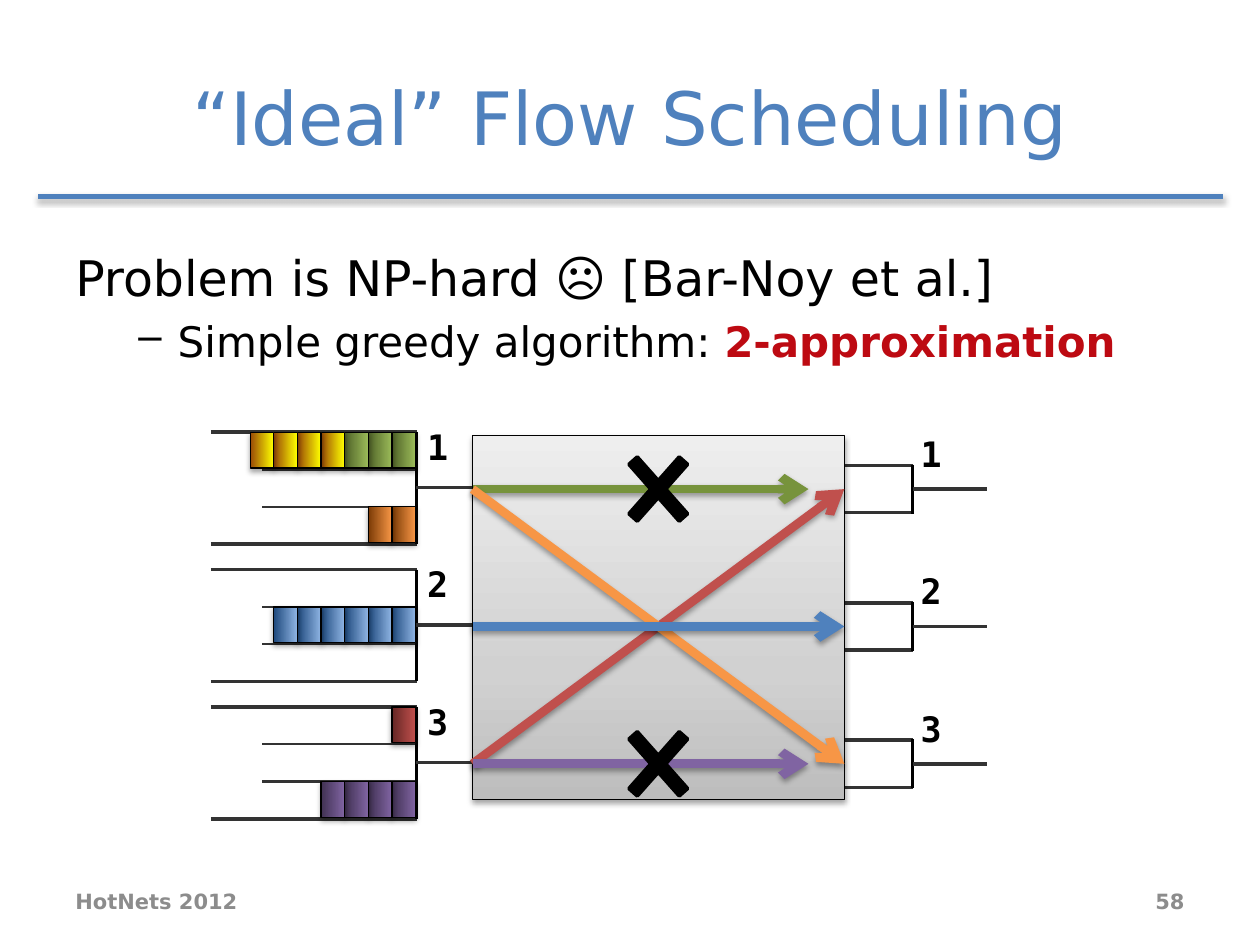
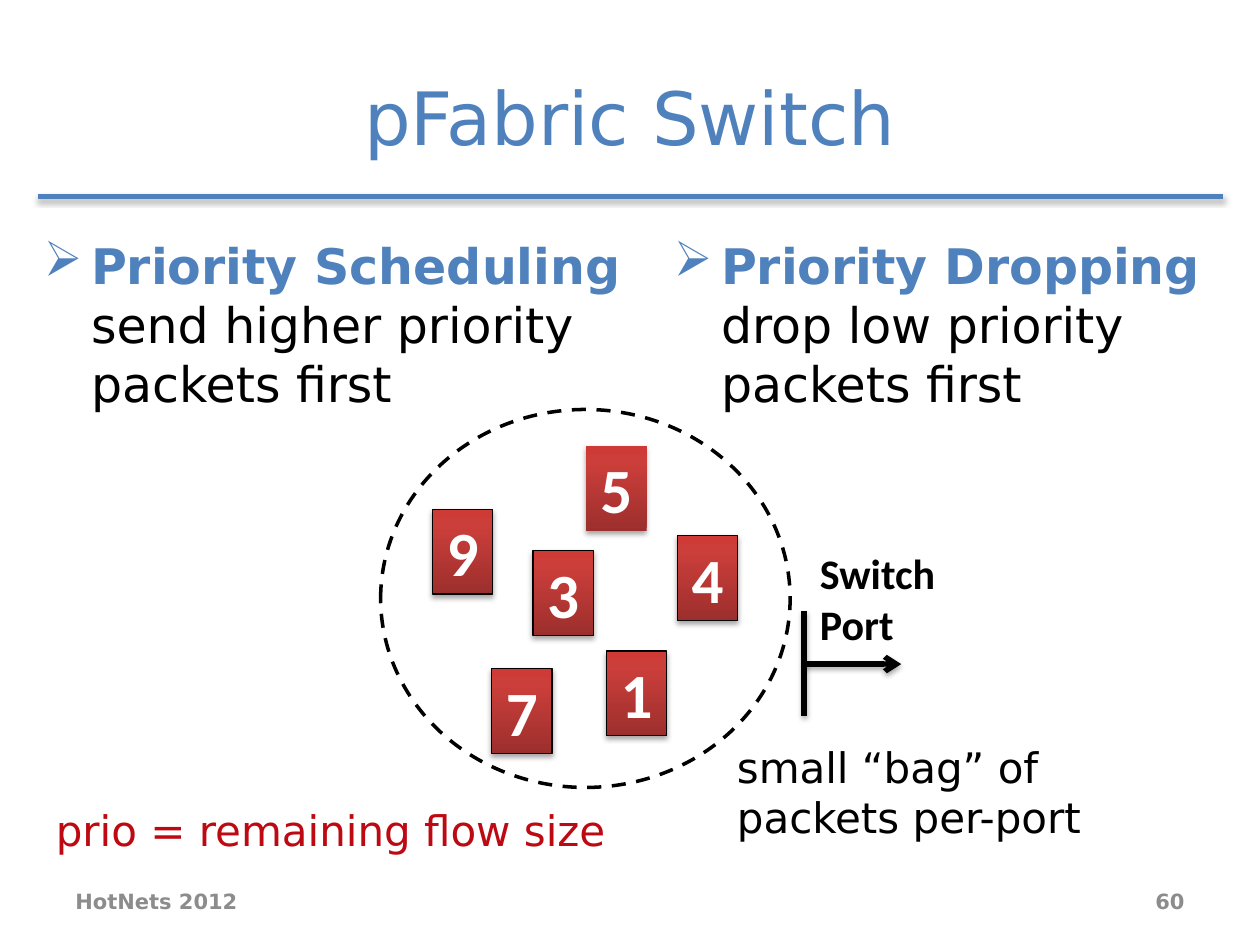
from copy import deepcopy

from lxml import etree
from pptx import Presentation
from pptx.dml.color import RGBColor
from pptx.enum.dml import MSO_LINE
from pptx.enum.shapes import MSO_CONNECTOR, MSO_SHAPE
from pptx.enum.text import MSO_ANCHOR, PP_ALIGN
from pptx.oxml.ns import qn
from pptx.util import Pt

RECT, OVAL, CROSS = MSO_SHAPE.RECTANGLE, MSO_SHAPE.OVAL, MSO_SHAPE.MATH_MULTIPLY
STRAIGHT, DASH = MSO_CONNECTOR.STRAIGHT, MSO_LINE.DASH
LEFT, CENTER, RIGHT = PP_ALIGN.LEFT, PP_ALIGN.CENTER, PP_ALIGN.RIGHT
TOP, MIDDLE = MSO_ANCHOR.TOP, MSO_ANCHOR.MIDDLE

SANS, MONO, CARD = "DejaVu Sans", "DejaVu Sans Mono", "Calibri"

BLACK = RGBColor(0x00, 0x00, 0x00)
WHITE = RGBColor(0xFF, 0xFF, 0xFF)
DARK = RGBColor(0x33, 0x33, 0x33)
GRAY = RGBColor(0x8C, 0x8C, 0x8C)
BLUE = RGBColor(0x4F, 0x81, 0xBD)
CRIMSON = RGBColor(0xBD, 0x0A, 0x12)
RED = RGBColor(0xC0, 0x50, 0x4D)
GREEN = RGBColor(0x77, 0x93, 0x3C)
ORANGE = RGBColor(0xF7, 0x96, 0x46)
PURPLE = RGBColor(0x80, 0x64, 0xA2)

# Gradients: (position, colour) stops
LIMES = [(0, RGBColor(0x4F, 0x62, 0x28)), (1, RGBColor(0x9B, 0xBB, 0x59))]
GOLDS = [(0, RGBColor(0x98, 0x48, 0x07)), (1, RGBColor(0xFF, 0xFF, 0x00))]
RUSTS = [(0, RGBColor(0x7A, 0x3A, 0x05)), (1, ORANGE)]
BLUES = [(0, RGBColor(0x1F, 0x49, 0x7D)), (1, RGBColor(0x8E, 0xB4, 0xE3))]
REDS = [(0, RGBColor(0x63, 0x25, 0x23)), (1, RED)]
PLUMS = [(0, RGBColor(0x40, 0x31, 0x52)), (1, PURPLE)]
STEEL = [(0, RGBColor(0xBD, 0xBD, 0xBD)), (0.35, RGBColor(0xD1, 0xD1, 0xD1)),
         (1, RGBColor(0xEE, 0xEE, 0xEE))]
BRICK = [(0, RGBColor(0x9C, 0x2F, 0x2D)), (0.8, RGBColor(0xCB, 0x3E, 0x3A)),
         (1, RGBColor(0xCE, 0x3B, 0x37))]

# Switch diagram
STEP = 78.5                # port to port
LANE = 21.3                # lane to lane within a port
QUEUE_TOP, QUEUE_END = 247, 237.5
BOX = (270, 249, 212.5, 208)
BOX_END = BOX[0] + BOX[2]
FLOW_TOP = 279.5


# ---- Elements ----

def add(parent, tag, **attrs):
    return etree.SubElement(parent, qn(tag), attrs)


def cast(item, shadow):
    """Replace the theme's shadow with a soft one below, or with none."""
    effects = add(item._element.spPr, "a:effectLst")
    if shadow:
        outer = add(effects, "a:outerShdw", blurRad=str(Pt(3.1)),
                    dist=str(Pt(1.8)), dir="5400000", rotWithShape="0")
        color = add(outer, "a:srgbClr", val=str(BLACK))
        add(color, "a:alpha", val="35000")


def shade(shape, stops, angle):
    shape.fill.gradient()
    shape.fill.gradient_angle = angle
    nodes = shape._element.spPr.find(".//" + qn("a:gsLst"))
    while len(nodes) < len(stops):
        nodes.append(deepcopy(nodes[0]))
    for stop, (place, color) in zip(shape.fill.gradient_stops, stops):
        stop.position = place
        stop.color.rgb = color


def form(slide, kind, box, fill, edge=0.75, angle=0, shadow=True):
    """Draw a preset shape; fill is a colour or a list of gradient stops."""
    shape = slide.shapes.add_shape(kind, *map(Pt, box))
    if isinstance(fill, list):
        shade(shape, fill, angle)
    else:
        shape.fill.solid()
        shape.fill.fore_color.rgb = fill
    if edge:
        shape.line.color.rgb = BLACK
        shape.line.width = Pt(edge)
    else:
        shape.line.fill.background()
    cast(shape, shadow)
    return shape


def line(slide, x1, y1, x2, y2, color=DARK, width=2, arrow=False, shadow=False):
    link = slide.shapes.add_connector(STRAIGHT, *map(Pt, (x1, y1, x2, y2)))
    link.line.color.rgb = color
    link.line.width = Pt(width)
    if arrow:
        add(link.line._get_or_add_ln(), "a:tailEnd", type="arrow")
    cast(link, shadow)


def write(par, runs, size, color=BLACK, face=SANS, bold=False, align=LEFT):
    """Fill a paragraph; runs is a text or a list of (text, colour, bold)."""
    par.alignment = align
    font = par.font
    font.name, font.size = face, Pt(size)
    if isinstance(runs, str):
        par.add_run().text = runs
        font.color.rgb, font.bold = color, bold
        return
    for words, tint, heavy in runs:
        run = par.add_run()
        run.text = words
        run.font.color.rgb, run.font.bold = tint, heavy


def mark(par, char, left, hang):
    props = par._p.get_or_add_pPr()
    props.set("marL", str(Pt(left)))
    props.set("indent", str(Pt(-hang)))
    bullet = etree.Element(qn("a:buChar"), char=char)
    font = props.find(qn("a:defRPr"))
    font.addprevious(bullet)


def text(slide, box, runs, size, anchor=TOP, **style):
    frame = slide.shapes.add_textbox(*map(Pt, box)).text_frame
    frame.word_wrap = True
    frame.vertical_anchor = anchor
    write(frame.paragraphs[0], runs, size, **style)
    return frame


def start(deck, title, page):
    """Add a slide with the shared title, rule and footer."""
    slide = deck.slides.add_slide(deck.slide_layouts[6])
    line(slide, 699, 112.5, 21.5, 112.5, BLUE, 3, shadow=True)
    text(slide, (36, 21.6, 648, 90), title, 42, MIDDLE, color=BLUE, align=CENTER)
    text(slide, (36, 500.5, 168, 28.8), "HotNets 2012", 12, MIDDLE,
         color=GRAY, bold=True)
    text(slide, (516, 500.5, 168, 28.8), page, 12, MIDDLE,
         color=GRAY, bold=True, align=RIGHT)
    return slide


# ---- Flow scheduling slide ----

def label(slide, x, y, name):
    text(slide, (x, y, 28, 31.5), name, 20, face=MONO, bold=True)


def source(slide, port):
    """Input port: four lane lines, an end wall and a stub to the switch."""
    top = QUEUE_TOP + port * STEP
    for lane in range(4):
        y = top + lane * LANE
        outer = lane in (0, 3)
        line(slide, 120.5 if outer else 150, y, 238.5, y, width=2 if outer else 1.25)
    line(slide, 238, top, 238, top + 3 * LANE, BLACK)
    line(slide, 238, top + 31.7, BOX[0], top + 31.7)
    label(slide, 237, top - 7.5, str(port + 1))


def sink(slide, port):
    """Output port: an open box with a stub leaving it."""
    mid, wall = FLOW_TOP + port * STEP, 521.5
    for y in (mid - 13.5, mid + 13.5):
        line(slide, BOX_END, y, wall, y)
    line(slide, wall, mid - 14, wall, mid + 14, BLACK)
    line(slide, wall, mid, 564, mid)
    label(slide, 519, mid - 36, str(port + 1))


def queue(slide, port, lane, packets):
    """Stack packets leftwards from the port's end wall."""
    wide = 13.5
    top = QUEUE_TOP + port * STEP + lane * LANE
    for place, stops in enumerate(packets, 1):
        form(slide, RECT, (QUEUE_END - place * wide, top, wide, 20.5), stops)


def flow(slide, source_port, sink_port, color, end=BOX_END):
    line(slide, BOX[0], FLOW_TOP + source_port * STEP, end,
         FLOW_TOP + sink_port * STEP, color, 5, arrow=True, shadow=True)


def cross(slide, port):
    mid = FLOW_TOP + port * STEP
    shape = form(slide, CROSS, (348.5, mid - 31.3, 55.4, 62.6), BLACK, 2, shadow=False)
    shape.adjustments[0] = 0.116


def ideal(deck):
    slide = start(deck, "“Ideal” Flow Scheduling", "58")
    frame = text(slide, (36, 138.2, 648, 100),
                 [("Problem is NP-hard ", BLACK, False), ("☹", BLACK, True),
                  (" [Bar-Noy et al.]", BLACK, False)], 28)
    point = frame.add_paragraph()
    write(point, [("Simple greedy algorithm: ", BLACK, False),
                  ("2-approximation", CRIMSON, True)], 24)
    point.space_before = Pt(4.8)
    mark(point, "–", 58.5, 22.5)

    # Ports and switch
    for port in range(3):
        source(slide, port)
        sink(slide, port)
    form(slide, RECT, BOX, STEEL, angle=90)

    # Waiting packets
    queue(slide, 0, 0, [LIMES] * 3 + [GOLDS] * 4)
    queue(slide, 0, 2, [RUSTS] * 2)
    queue(slide, 1, 1, [BLUES] * 6)
    queue(slide, 2, 0, [REDS])
    queue(slide, 2, 2, [PLUMS] * 4)

    # Flows, two of them blocked
    flow(slide, 2, 0, RED)
    flow(slide, 0, 0, GREEN, 462)
    cross(slide, 0)
    flow(slide, 0, 2, ORANGE)
    flow(slide, 2, 2, PURPLE, 462)
    cross(slide, 2)
    flow(slide, 1, 1, BLUE)


# ---- Priority switch slide ----

def rule(slide, x, wide, name, detail):
    frame = text(slide, (x, 131, wide, 108.7),
                 [(name + " ", BLUE, True), (detail, BLACK, False)], 28)
    mark(frame.paragraphs[0], "➢", 27, 27)


def card(slide, x, y, number, edge=0.75):
    shape = form(slide, RECT, (x, y, 34.5, 48.5), BRICK, edge, 90)
    shape.text_frame.vertical_anchor = MIDDLE
    write(shape.text_frame.paragraphs[0], number, 36, WHITE, CARD, True, CENTER)


def switch(deck):
    slide = start(deck, "pFabric Switch", "60")

    # Bag of packets
    bag = form(slide, OVAL, (217.5, 234, 234, 216), WHITE, 2, shadow=False)
    bag.line.dash_style = DASH
    for x, y, number in ((281, 382, "7"), (346.5, 372, "1"), (247, 291, "9"),
                         (387, 306, "4"), (304.5, 314.5, "3")):
        card(slide, x, y, number)
    card(slide, 335, 255, "5", edge=0)

    # Port
    text(slide, (461.5, 309.5, 83.5, 65.5), "Switch Port", 24, face=CARD, bold=True)
    line(slide, 459.5, 349, 459.5, 409, BLACK, 3, shadow=True)
    line(slide, 459.5, 379.5, 515, 379.5, BLACK, 3, arrow=True, shadow=True)

    # Rules and notes
    rule(slide, 18, 360, "Priority Scheduling", "send higher priority packets first")
    rule(slide, 378, 318, "Priority Dropping", "drop low priority packets first")
    text(slide, (414, 420, 234, 66), "small “bag” of packets per-port", 24)
    text(slide, (6, 456, 366, 42), "prio = remaining flow size", 24,
         color=CRIMSON, align=CENTER)


def main():
    deck = Presentation()
    deck.slide_width, deck.slide_height = Pt(720), Pt(540)
    ideal(deck)
    switch(deck)
    deck.save("out.pptx")


if __name__ == "__main__":
    main()
